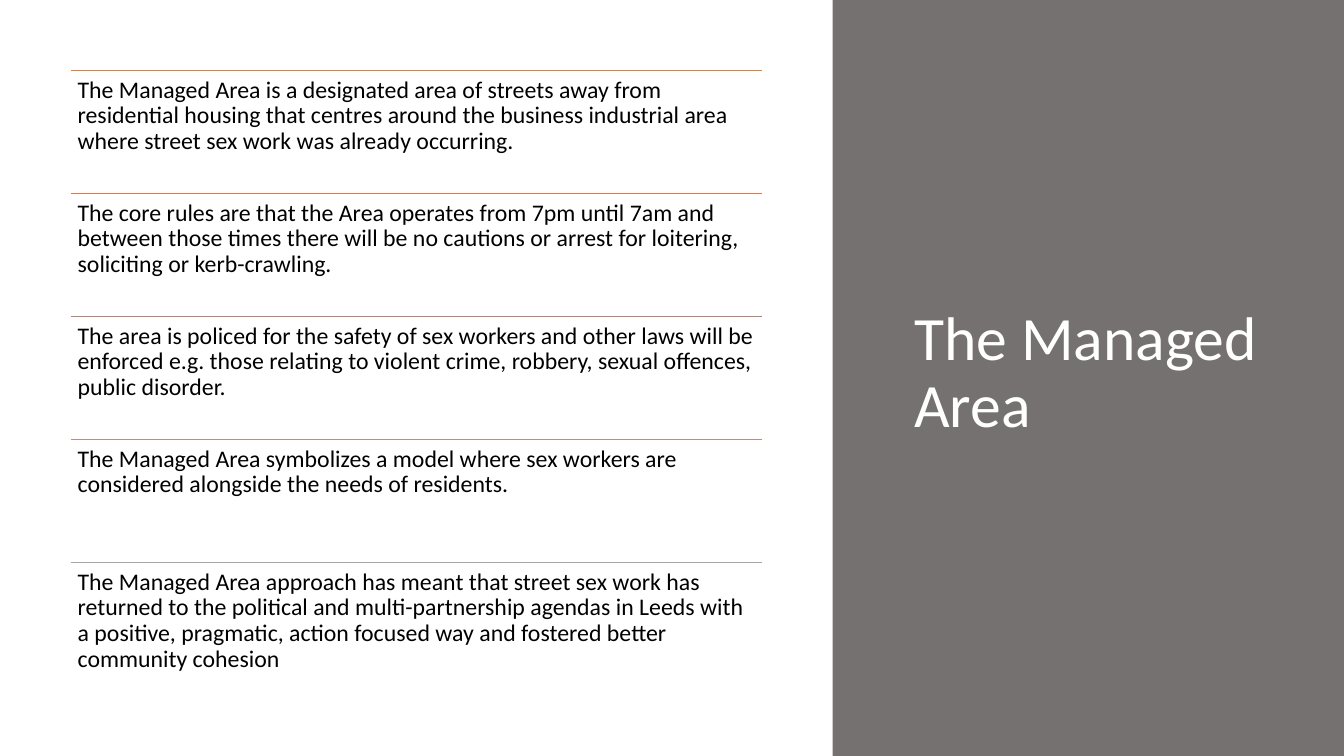
from lxml.etree import SubElement
from pptx import Presentation
from pptx.dml.color import RGBColor
from pptx.enum.shapes import MSO_CONNECTOR, MSO_SHAPE
from pptx.enum.text import MSO_ANCHOR, PP_ALIGN
from pptx.oxml.ns import qn
from pptx.util import Pt

TITLE = "The Managed Area"
POINTS = [
    ("orange", "The Managed Area is a designated area of streets away from residential housing "
     "that centres around the business industrial area where street sex work was already occurring."),
    ("amber", "The core rules are that the Area operates from 7pm until 7am and between those times "
     "there will be no cautions or arrest for loitering, soliciting or kerb-crawling."),
    ("rose", "The area is policed for the safety of sex workers and other laws will be enforced "
     "e.g. those relating to violent crime, robbery, sexual offences, public disorder."),
    ("mauve", "The Managed Area symbolizes a model where sex workers are considered alongside "
     "the needs of residents."),
    ("grey", "The Managed Area approach has meant that street sex work has returned to the political "
     "and multi-partnership agendas in Leeds with a positive, pragmatic, action focused way "
     "and fostered better community cohesion"),
]
COLORS = {
    "white": "FFFFFF", "black": "000000", "panel": "767171", "orange": "ED7D31",
    "amber": "D87A51", "rose": "C48170", "mauve": "B4908B", "grey": "A5A5A5",
}
FONT = "Calibri"
SLIDE_W, SLIDE_H = 960, 540
PANEL_X = 594.8
LIST_X, LIST_Y, LIST_W = 50.4, 50.4, 494
ROW_H = 87.84
INSET = 5.04


def color(name):
    return RGBColor.from_string(COLORS[name])


def style(p, size, name):
    p.line_spacing = 0.9
    p.alignment = PP_ALIGN.LEFT
    p.font.name = FONT
    p.font.size = Pt(size)
    p.font.color.rgb = color(name)


def add_title_panel(s):
    panel = s.shapes.add_shape(MSO_SHAPE.RECTANGLE, Pt(PANEL_X), 0,
                               Pt(SLIDE_W - PANEL_X), Pt(SLIDE_H))
    panel.shadow.inherit = False
    panel.fill.solid()
    panel.fill.fore_color.rgb = color("panel")
    panel.line.fill.background()

    title = s.shapes.title
    title.element.addprevious(panel.element)  # panel goes behind the title
    title.left, title.top = Pt(645.8), Pt(50.4)
    title.width, title.height = Pt(288.7), Pt(433.4)
    tf = title.text_frame
    tf.text = TITLE
    tf.word_wrap = True
    tf.vertical_anchor = MSO_ANCHOR.MIDDLE
    style(tf.paragraphs[0], 44, "white")


def add_point(s, y, rule_color, text):
    rule = s.shapes.add_connector(MSO_CONNECTOR.STRAIGHT, Pt(LIST_X), Pt(y),
                                  Pt(LIST_X + LIST_W), Pt(y))
    rule.line.color.rgb = color(rule_color)
    rule.line.width = Pt(1)
    SubElement(rule.element.spPr, qn("a:effectLst"))

    box = s.shapes.add_textbox(Pt(LIST_X), Pt(y), Pt(LIST_W), Pt(ROW_H))
    tf = box.text_frame
    tf.word_wrap = True
    tf.margin_left = tf.margin_right = tf.margin_top = tf.margin_bottom = Pt(INSET)
    tf.text = text
    style(tf.paragraphs[0], 17, "black")


def main():
    prs = Presentation()
    prs.slide_width, prs.slide_height = Pt(SLIDE_W), Pt(SLIDE_H)
    s = prs.slides.add_slide(prs.slide_layouts[5])
    add_title_panel(s)
    for i, (rule_color, text) in enumerate(POINTS):
        add_point(s, LIST_Y + i * ROW_H, rule_color, text)
    prs.save("out.pptx")


if __name__ == "__main__":
    main()
